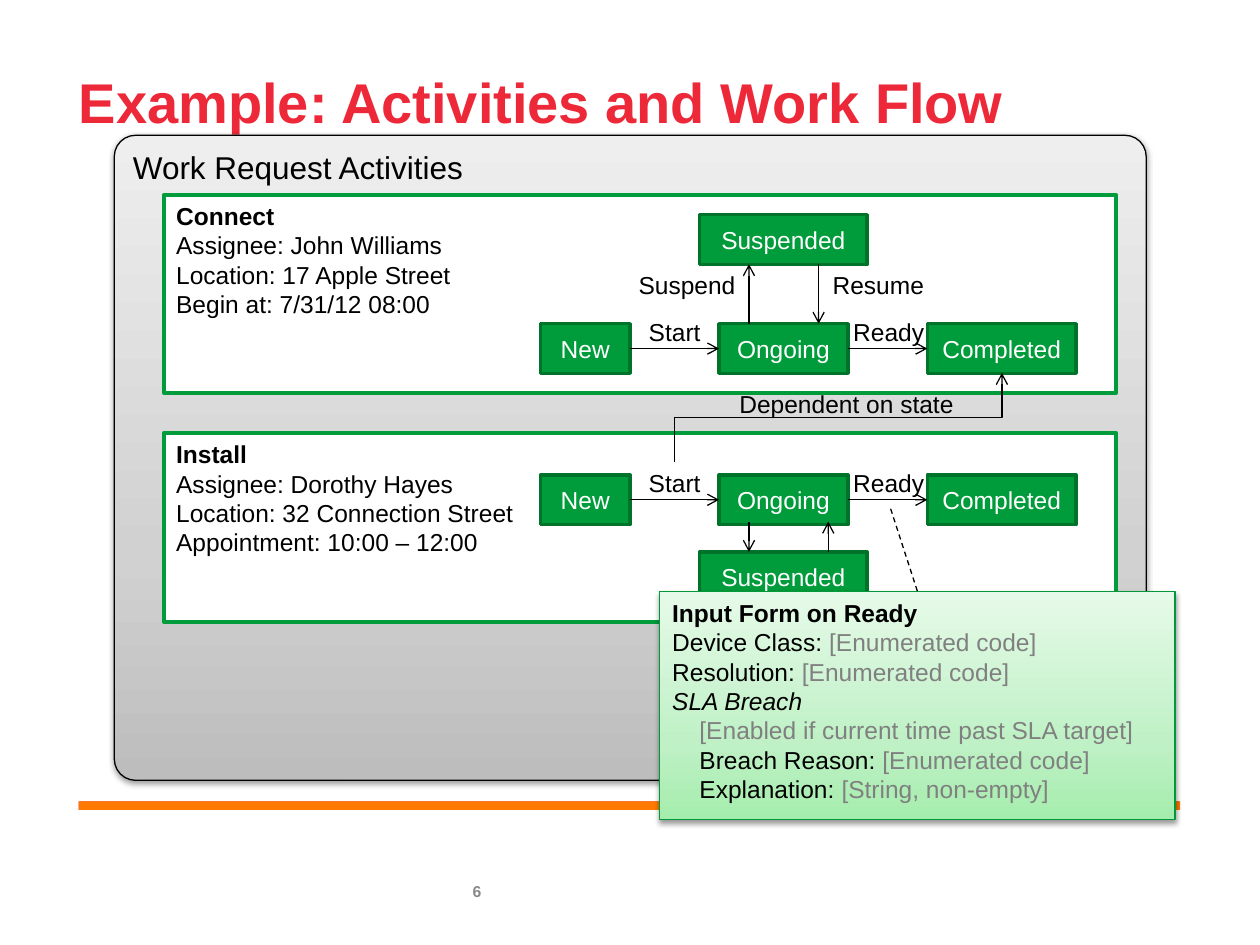
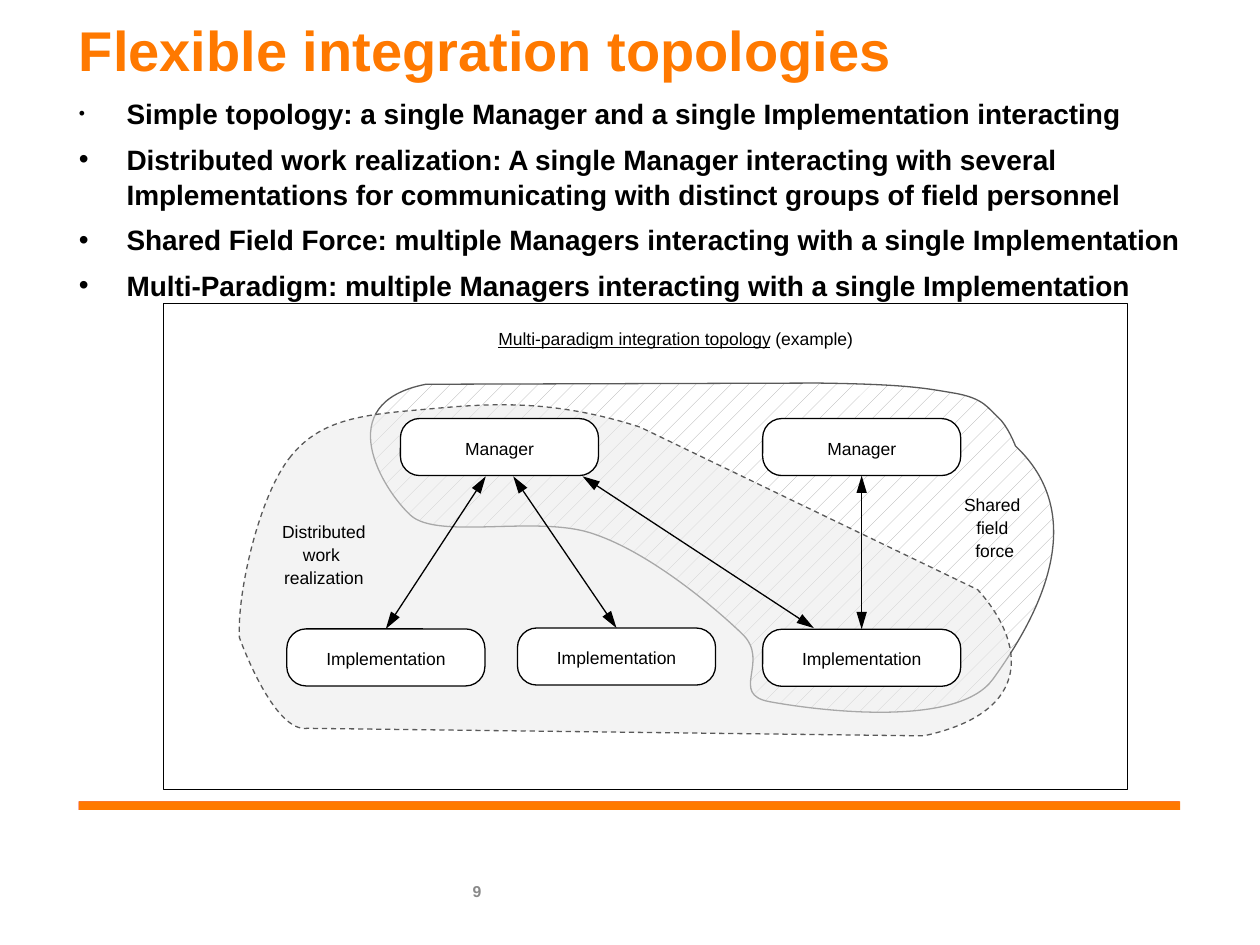
from copy import deepcopy

from pptx import Presentation
from pptx.dml.color import RGBColor
from pptx.enum import dml, shapes, text
from pptx.oxml.ns import qn
from pptx.oxml.xmlchemy import OxmlElement
from pptx.util import Pt

HUES = {
    "red": "ED2939", "orange": "FF7900", "black": "000000", "white": "FFFFFF",
    "green": "009B3A", "moss": "00732B", "leaf": "009839", "number": "898989",
    "hint": "808080", "outline": "595959", "hatch": "A6A6A6", "area": "EAEAEA",
}
HUES = {name: RGBColor.from_string(code) for name, code in HUES.items()}
RECT = shapes.MSO_SHAPE.RECTANGLE
ROUND = shapes.MSO_SHAPE.ROUNDED_RECTANGLE
TOP, MIDDLE = text.MSO_ANCHOR.TOP, text.MSO_ANCHOR.MIDDLE
LEFT, CENTER = text.PP_ALIGN.LEFT, text.PP_ALIGN.CENTER


def box(slide, kind, place, words="", size=14, ink="black", fill=None, edge=None,
        width=0.75, align=LEFT, anchor=TOP, inset=None, wrap=True):
    """Add a shape, or a text box when kind is None; place is in points."""
    place = [Pt(v) for v in place]
    if kind is None:
        item = slide.shapes.add_textbox(*place)
    else:
        item = slide.shapes.add_shape(kind, *place)
        item.shadow.inherit = False
        if fill:
            item.fill.solid()
            item.fill.fore_color.rgb = HUES[fill]
        else:
            item.fill.background()
        if edge:
            item.line.color.rgb = HUES[edge]
            item.line.width = Pt(width)
        else:
            item.line.fill.background()
    frame = item.text_frame
    frame.word_wrap = wrap
    if not wrap:
        frame.auto_size = text.MSO_AUTO_SIZE.SHAPE_TO_FIT_TEXT
    frame.vertical_anchor = anchor
    if inset is not None:
        frame.margin_left = frame.margin_right = Pt(inset)
        frame.margin_top = frame.margin_bottom = Pt(inset)
    if words:
        frame.text = words
        for para in frame.paragraphs:
            para.alignment = align
            for run in para.runs:
                run.font.name, run.font.size = "Arial", Pt(size)
                run.font.color.rgb = HUES[ink]
    return item


def line(slide, ends, head=None, tail=None, kind=shapes.MSO_CONNECTOR.STRAIGHT):
    """Add a thin black connector; head and tail name arrowhead types."""
    link = slide.shapes.add_connector(kind, *[Pt(v) for v in ends])
    link.line.color.rgb = HUES["black"]
    link.line.width = Pt(0.75)
    for tag, tip in (("a:headEnd", head), ("a:tailEnd", tail)):
        if tip:
            mark = OxmlElement(tag)
            mark.set("type", tip)
            if tip == "triangle":
                mark.set("len", "lg")
            link.line._get_or_add_ln().append(mark)
    link._element.spPr.append(OxmlElement("a:effectLst"))
    return link


deck = Presentation()
deck.slide_width, deck.slide_height = Pt(720), Pt(540)

# Shared title style, band and page number
slides = []
for layout, words, hue, top, height, number in (
    (5, "Example: Activities and Work Flow", "red", 38.5, 70.6, "6"),
    (1, "Flexible integration topologies", "orange", 9.1, 51, "9"),
):
    slide = deck.slides.add_slide(deck.slide_layouts[layout])
    slides.append(slide)
    title = slide.shapes.title
    title.left, title.top, title.width, title.height = Pt(45.1), Pt(top), Pt(612), Pt(height)
    frame = title.text_frame
    frame.text = words
    frame.auto_size = text.MSO_AUTO_SIZE.NONE
    frame.vertical_anchor = TOP
    frame.margin_left = frame.margin_right = frame.margin_top = frame.margin_bottom = 0
    frame.paragraphs[0].alignment = LEFT
    font = frame.paragraphs[0].runs[0].font
    font.name, font.size, font.bold = "Arial", Pt(32), True
    font.color.rgb = HUES[hue]
    for left, fill in ((44.9, "red"), (45.1, "orange")):
        box(slide, RECT, (left, 457.9, 629.3, 5), fill=fill)
    page = box(slide, None, (270, 504, 121.7, 10), number, 9, "number", inset=0)
    page.text_frame.paragraphs[0].runs[0].font.bold = True
flow, topo = slides

# Slide 1: work request panel with two activities
panel = box(flow, ROUND, (65.3, 77.3, 589.7, 368.6), "Work Request Activities", 18,
            fill="white", edge="black")
panel.adjustments[0] = 0.033

for top, height, words in (
    (247.4, 108, "Install\nAssignee: Dorothy Hayes\nLocation: 32 Connection Street\n"
                 "Appointment: 10:00 – 12:00"),
    (111.3, 113.3, "Connect\nAssignee: John Williams\nLocation: 17 Apple Street\n"
                   "Begin at: 7/31/12 08:00"),
):
    card = box(flow, RECT, (93.6, top, 544.3, height), words, fill="white",
               edge="green", width=2)
    card.text_frame.paragraphs[0].runs[0].font.bold = True

for row, pause in ((185, 122.7), (271.4, 315.4)):
    states = [
        box(flow, RECT, (left, top, width, 28.4), words, ink="white", fill="green",
            edge="moss", width=2, align=CENTER, anchor=MIDDLE)
        for words, left, top, width in (
            ("New", 308.9, row, 51.1), ("Ongoing", 410.9, row, 73.6),
            ("Completed", 529.9, row, 85), ("Suspended", 399.8, pause, 95.8))
    ]
    for source, target in zip(states[:2], states[1:3]):
        step = line(flow, (0, 0, 0, 0), tail="arrow")
        step.begin_connect(source, 3)
        step.end_connect(target, 1)
    for words, left, width in (("Start", 363.6, 44.6), ("Ready", 480.5, 55.4)):
        box(flow, None, (left, row - 7.2, width, 24.2), words, wrap=False)

for x, start, end in ((428, 185, 151), (467.8, 151, 185),
                      (428, 298.1, 315.4), (473.3, 315.4, 298.1)):
    line(flow, (x, start, x, end), tail="arrow")

for words, left, top, width in (("Suspend", 357.8, 150.9, 70.6), ("Resume", 468.7, 150.9, 67),
                                ("Dependent on state", 415.4, 218.9, 137.5)):
    box(flow, None, (left, top, width, 24.2), words, wrap=False)

# A quarter turn makes the elbow leave and arrive vertically
bend = line(flow, (504.5, 332.3, 453.4, 145.1), tail="arrow", kind=shapes.MSO_CONNECTOR.ELBOW)
bend._element.spPr.find(qn("a:xfrm")).set("rot", "5400000")

form = box(flow, RECT, (377, 338, 294.5, 130.3), fill="white", edge="leaf")
for i, (words, indent, hang) in enumerate((
    ("Input Form on Ready", 0, 0),
    ("Device Class: [Enumerated code]", 0, 0),
    ("Resolution: [Enumerated code]", 0, 0),
    ("SLA Breach\v[Enabled if current time past SLA target]", 15.6, -15.6),
    ("Breach Reason: [Enumerated code]", 15.6, 0),
    ("Explanation: [String, non-empty]", 15.6, 0),
)):
    frame = form.text_frame
    para = frame.add_paragraph() if i else frame.paragraphs[0]
    label, mark, hint = words.partition("[")
    para.text = label
    if hint:
        para.add_run().text = mark + hint
    para.alignment = LEFT
    props = para._p.get_or_add_pPr()
    props.set("marL", str(Pt(indent)))
    props.set("indent", str(Pt(hang)))
    for run in para.runs:
        run.font.name, run.font.size = "Arial", Pt(14)
        run.font.color.rgb = HUES["hint" if run.text.startswith("[") else "black"]
        run.font.bold = i == 0
        run.font.italic = run.text.startswith("SLA")
line(flow, (524.2, 337.7, 508.3, 288.7)).line.dash_style = dml.MSO_LINE.DASH

# Gradient and soft shadow of the panel and the form
for item, codes in ((panel, ("BDBDBD", "D1D1D1", "EEEEEE")),
                    (form, ("A5EDAD", "C0F1C6", "E6FAE9"))):
    item.fill.gradient()
    item.fill.gradient_angle = 90
    props = item._element.spPr
    stops = props.find(qn("a:gradFill")).find(qn("a:gsLst"))
    stops.insert(1, deepcopy(stops[0]))
    for stop, spot, code in zip(item.fill.gradient_stops, (0, 0.35, 1), codes):
        stop.position = spot
        stop.color.rgb = RGBColor.from_string(code)
    shade = OxmlElement("a:outerShdw")
    for key, value in (("blurRad", Pt(3.1)), ("dist", Pt(1.6)), ("dir", 5400000),
                       ("rotWithShape", 0)):
        shade.set(key, str(value))
    tint = OxmlElement("a:srgbClr")
    tint.set("val", "000000")
    alpha = OxmlElement("a:alpha")
    alpha.set("val", "38000")
    tint.append(alpha)
    shade.append(tint)
    props.find(qn("a:effectLst")).append(shade)

# Slide 2: list of topologies
body = topo.placeholders[1]
body.left, body.top, body.width, body.height = Pt(45.1), Pt(54.4), Pt(638), Pt(113.8)
frame = body.text_frame
frame.text = "\n".join((
    "Simple topology: a single Manager and a single Implementation interacting",
    "Distributed work realization: A single Manager interacting with several "
    "Implementations for communicating with distinct groups of field personnel",
    "Shared Field Force: multiple Managers interacting with a single Implementation",
    "Multi-Paradigm: multiple Managers interacting with a single Implementation",
))
frame.auto_size = text.MSO_AUTO_SIZE.NONE
frame.vertical_anchor = TOP
frame.margin_left = frame.margin_right = frame.margin_top = frame.margin_bottom = 0
for i, para in enumerate(frame.paragraphs):
    props = para._p.get_or_add_pPr()
    props.set("marL", str(Pt(27.2)))
    props.set("indent", str(-Pt(27.2)))
    for tag, key, value in (("a:buSzPct", "val", "100000" if i else "62500"),
                            ("a:buFont", "typeface", "Arial"), ("a:buChar", "char", "•")):
        mark = OxmlElement(tag)
        mark.set(key, value)
        props.append(mark)
    para.line_spacing = Pt(20)
    para.space_before = Pt(6 if i else 0)
    font = para.runs[0].font
    font.name, font.size, font.bold = "Arial", Pt(16), True
    font.color.rgb = HUES["black"]

# Topology diagram: two overlapping areas, each a chain of lines and cubic curves
box(topo, RECT, (93.6, 173.5, 550.8, 277.9), edge="black", width=0.5)
shared = (
    (243.4, 219.6),
    (187.9, 230.4, 218.9, 280.1, 234.7, 294.5),
    (250.6, 308.9, 308.2, 293.8, 339.8, 305.3),
    (371.5, 316.1, 407.5, 346.3, 424.1, 362.2),
    (440.6, 378, 416.2, 396.7, 439.9, 401),
    (463.7, 405.4, 546.5, 416.9, 567.4, 388.1),
    (588.2, 359.3, 626.4, 298.1, 580.3, 254.9),
    (580.3, 254.9, 576, 243.4, 570.2, 238.3),
    (564.5, 233.3, 562.3, 227.5, 545, 224.6),
    (528.5, 221.8, 517.7, 219.6, 467.3, 218.9),
    (243.4, 219.6),
)
spread = (
    (166.3, 260.6),
    (148.3, 282.2, 135.4, 338.4, 136.8, 364.3),
    (136.8, 364.3, 156.2, 419, 175.7, 416.2),
    (527.8, 420.5),
    (591.8, 406.8, 585.4, 366.5, 558.7, 337),
    (365.8, 244.1),
    (312.5, 226.8, 275, 231.1, 241.9, 234),
    (208.8, 236.9, 183.6, 239, 166.3, 260.6),
)
areas = []
for parts in (shared, spread):
    dots = [(Pt(x), Pt(y)) for part in parts for x, y in zip(part[::2], part[1::2])]
    pen = topo.shapes.build_freeform(*dots[0])
    pen.add_line_segments(dots[1:], close=True)
    area = pen.convert_to_shape()
    # Merge each three points of a curved part into one cubic segment
    steps = iter(list(area._element.iter(qn("a:lnTo"))))
    for part in parts[1:]:
        first = next(steps)
        if len(part) == 6:
            curve = OxmlElement("a:cubicBezTo")
            first.addprevious(curve)
            for step in (first, next(steps), next(steps)):
                curve.append(step[0])
                step.getparent().remove(step)
    area.shadow.inherit = False
    area.line.color.rgb = HUES["outline"]
    area.line.width = Pt(0.75)
    areas.append(area)

areas[0].fill.patterned()
areas[0].fill.pattern = dml.MSO_PATTERN.PERCENT_5
areas[0].fill.fore_color.rgb = HUES["hatch"]
areas[0].fill.back_color.rgb = HUES["white"]
areas[1].fill.solid()
areas[1].fill.fore_color.rgb = HUES["area"]
areas[1].line.dash_style = dml.MSO_LINE.DASH
alpha = OxmlElement("a:alpha")
alpha.set("val", "55000")
areas[1]._element.spPr.find(qn("a:solidFill"))[0].append(alpha)

nodes = []
for words, left, top in (("Manager", 228.8, 239.2), ("Manager", 435.8, 239.2),
                         ("Implementation", 163.9, 359.4), ("Implementation", 295.7, 358.9),
                         ("Implementation", 435.8, 359.6)):
    node = box(topo, ROUND, (left, top, 113.2, 32.6), words, 10, fill="white", edge="black",
               align=CENTER, anchor=MIDDLE, inset=0)
    nodes.append(node)

for target, low, high in ((nodes[2], 220.5, 277.6), (nodes[3], 352.3, 293.3),
                          (None, 465.1, 332.9), (nodes[4], 492.4, 492.4)):
    link = line(topo, (low, 358.9, high, 272.2), "triangle", "triangle")
    if target:
        link.begin_connect(target, 0)
link.end_connect(nodes[1], 2)

notes = [
    box(topo, ROUND, place, words, 10, align=CENTER, anchor=MIDDLE, inset=0)
    for words, place in (
        ("Multi-paradigm integration topology", (242.1, 174.7, 288, 36.7)),
        ("Shared \vfield \vforce", (529.9, 263.5, 77, 74.9)),
        ("Distributed\vwork \vrealization", (133.2, 272.2, 103.7, 87.8)))
]
head = notes[0].text_frame.paragraphs[0]
head.runs[0].font.underline = True
tail = head.add_run()
tail.text = " (example)"
tail.font.name, tail.font.size = "Arial", Pt(10)
tail.font.color.rgb = HUES["black"]
for item in nodes + notes:
    item.adjustments[0] = 0.339
    item.text_frame.paragraphs[0].line_spacing = 1.1

deck.save("out.pptx")
